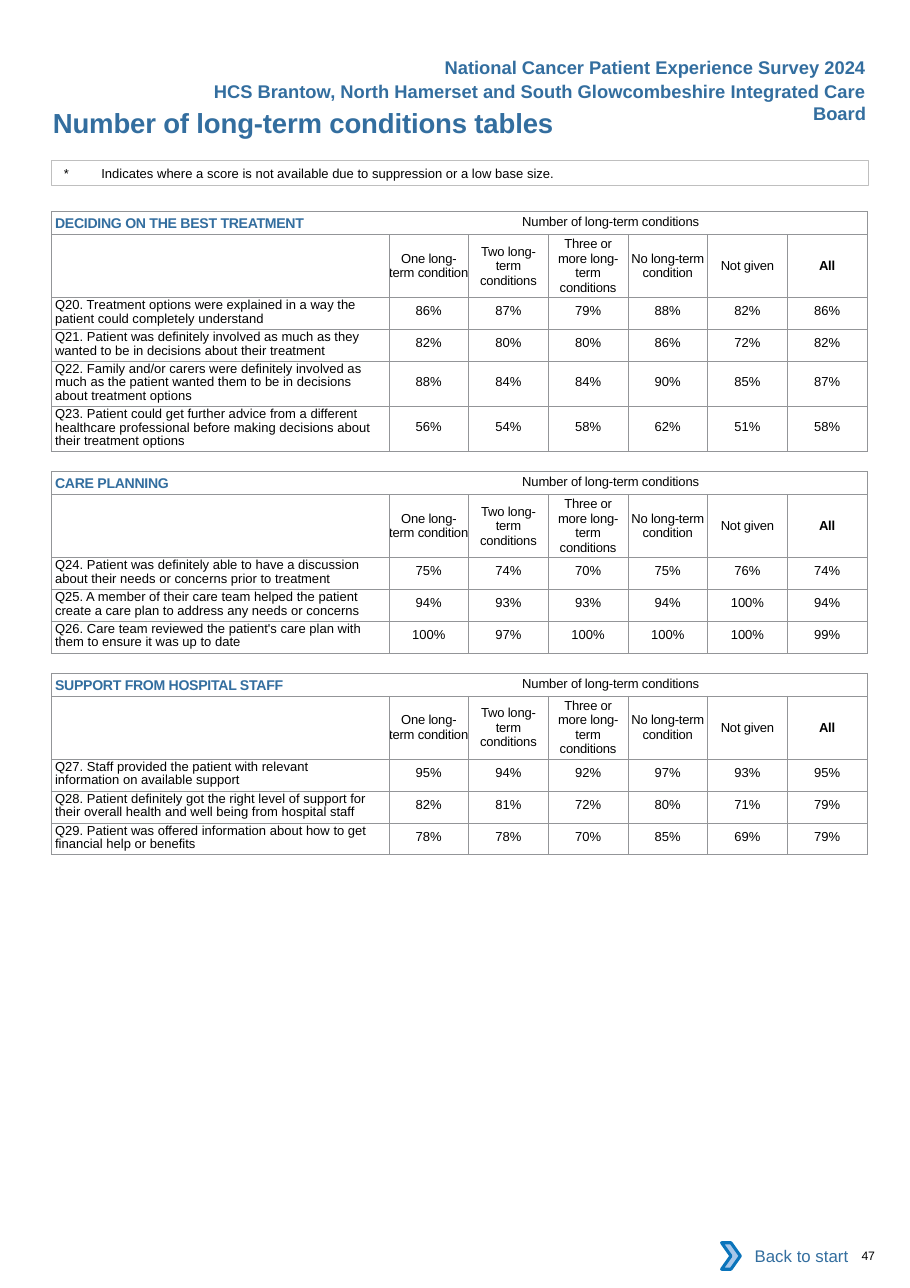
from lxml import etree
from pptx import Presentation
from pptx.dml.color import RGBColor
from pptx.enum.shapes import MSO_SHAPE
from pptx.enum.text import MSO_ANCHOR, PP_ALIGN
from pptx.oxml.ns import qn
from pptx.util import Inches, Pt

LEFT, CENTER, RIGHT = PP_ALIGN.LEFT, PP_ALIGN.CENTER, PP_ALIGN.RIGHT
TOP, MIDDLE = MSO_ANCHOR.TOP, MSO_ANCHOR.MIDDLE
RECTANGLE, CHEVRON = MSO_SHAPE.RECTANGLE, MSO_SHAPE.CHEVRON

BLUE, BLACK, GRID = "336E9F", "000000", "939598"
NO_INSETS = (0, 0, 0, 0)
BOX_INSETS = (0.1, 0.05, 0.1, 0.05)
MARGIN_LEFT = 0.47
TABLE_WIDTH, QUESTION_WIDTH = 7.4, 3.06
TITLE_HEIGHT, HEADER_HEIGHT = 0.21, 0.57
TABLES_TOP, TABLE_GAP = 1.92, 0.18
ROW_HEIGHTS = {2: 0.29, 3: 0.41}    # by lines in the question
SCORE_INSETS = {2: 0.06, 3: 0.12}

CONDITIONS = ["One long-term condition", "Two long-term conditions",
              "Three or more long-term conditions",
              "No long-term condition", "Not given", "All"]

# Heading, then (question lines, question, scores in percent)
SECTIONS = [
    ("DECIDING ON THE BEST TREATMENT", [
        (2, "Q20. Treatment options were explained in a way the patient could "
            "completely understand", (86, 87, 79, 88, 82, 86)),
        (2, "Q21. Patient was definitely involved as much as they wanted to be "
            "in decisions about their treatment", (82, 80, 80, 86, 72, 82)),
        (3, "Q22. Family and/or carers were definitely involved as much as the "
            "patient wanted them to be in decisions about treatment options",
         (88, 84, 84, 90, 85, 87)),
        (3, "Q23. Patient could get further advice from a different healthcare "
            "professional before making decisions about their treatment options",
         (56, 54, 58, 62, 51, 58)),
    ]),
    ("CARE PLANNING", [
        (2, "Q24. Patient was definitely able to have a discussion about their "
            "needs or concerns prior to treatment", (75, 74, 70, 75, 76, 74)),
        (2, "Q25. A member of their care team helped the patient create a care "
            "plan to address any needs or concerns", (94, 93, 93, 94, 100, 94)),
        (2, "Q26. Care team reviewed the patient's care plan with them to ensure "
            "it was up to date", (100, 97, 100, 100, 100, 99)),
    ]),
    ("SUPPORT FROM HOSPITAL STAFF", [
        (2, "Q27. Staff provided the patient with relevant information on "
            "available support", (95, 94, 92, 97, 93, 95)),
        (2, "Q28. Patient definitely got the right level of support for their "
            "overall health and well being from hospital staff",
         (82, 81, 72, 80, 71, 79)),
        (2, "Q29. Patient was offered information about how to get financial "
            "help or benefits", (78, 78, 70, 85, 69, 79)),
    ]),
]


def color(value):
    return RGBColor.from_string(value)


def set_insets(target, insets):
    for side, inset in zip(("left", "top", "right", "bottom"), insets):
        setattr(target, f"margin_{side}", Inches(inset))


def add_run(paragraph, text, size=8.5, hue=BLACK, bold=False, spacing=0, baseline=0):
    run = paragraph.add_run()
    run.text = text
    formats = {"name": "Arial", "size": Pt(size), "bold": bold}
    for name, value in formats.items():
        setattr(run.font, name, value)
    run.font.color.rgb = color(hue)
    properties = run.font._element
    for name, value in {"spc": spacing, "baseline": baseline}.items():
        if value:
            properties.set(name, str(value))


def set_indent(paragraph, indent, tab=None):
    properties = paragraph._p.get_or_add_pPr()
    properties.set("marL", str(Inches(indent)))
    if tab:
        tabs = etree.SubElement(properties, qn("a:tabLst"))
        etree.SubElement(tabs, qn("a:tab"), pos=str(Inches(tab)), algn="l")


def add_text(slide, box, text, align=LEFT, insets=NO_INSETS, wrap=True, indent=0,
             **font):
    shape = slide.shapes.add_textbox(*map(Inches, box))
    frame = shape.text_frame
    frame.word_wrap = wrap
    set_insets(frame, insets)
    paragraph = frame.paragraphs[0]
    paragraph.alignment = align
    set_indent(paragraph, indent)
    add_run(paragraph, text, **font)


def add_plain_shape(shapes, kind, box, fill=None, line=None, line_width=0.5):
    shape = shapes.add_shape(kind, *map(Inches, box))
    shape.shadow.inherit = False
    if fill:
        shape.fill.solid()
        shape.fill.fore_color.rgb = color(fill)
    else:
        shape.fill.background()
    if line:
        shape.line.color.rgb = color(line)
        shape.line.width = Pt(line_width)
    else:
        shape.line.fill.background()
    return shape


def format_cell(cell):
    set_insets(cell, NO_INSETS)
    cell.fill.background()
    properties = cell._tc.get_or_add_tcPr()
    for index, side in enumerate(("a:lnL", "a:lnR", "a:lnT", "a:lnB")):
        border = etree.Element(qn(side), w=str(Pt(0.5)))
        fill = etree.SubElement(border, qn("a:solidFill"))
        etree.SubElement(fill, qn("a:srgbClr"), val=GRID)
        properties.insert(index, border)


def fill_cell(cell, text, align=CENTER, anchor=MIDDLE, top=0, right=0, **font):
    cell.vertical_anchor = anchor
    set_insets(cell, (0, top, right, 0))
    paragraph = cell.text_frame.paragraphs[0]
    paragraph.alignment = align
    add_run(paragraph, text, **font)
    return paragraph


def add_score_table(slide, left, top, heading, questions):
    """Draw one section's table and return its height."""
    heights = [TITLE_HEIGHT, HEADER_HEIGHT] + [ROW_HEIGHTS[q[0]] for q in questions]
    score_width = (TABLE_WIDTH - QUESTION_WIDTH) / len(CONDITIONS)
    widths = [QUESTION_WIDTH] + [score_width] * len(CONDITIONS)
    box = (left, top, TABLE_WIDTH, sum(heights))
    table = slide.shapes.add_table(len(heights), len(widths), *map(Inches, box)).table
    table.first_row = table.horz_banding = False
    for row, height in zip(table.rows, heights):
        row.height = Inches(height)
    for column, width in zip(table.columns, widths):
        column.width = Inches(width)
    for cell in table.iter_cells():
        format_cell(cell)

    # Heading row
    title_cell = table.cell(0, 0)
    title_cell.merge(table.cell(0, len(CONDITIONS)))
    paragraph = fill_cell(title_cell, heading + "\t", LEFT, size=15.8, hue=BLUE,
                          bold=True, spacing=-15, baseline=-8000)
    add_run(paragraph, "Number of long-term conditions", spacing=-10)
    paragraph.line_spacing = Pt(11.8)
    set_indent(paragraph, 0.03, tab=4.24)

    # Column labels
    for column, label in enumerate(CONDITIONS, 1):
        fill_cell(table.cell(1, column), label, bold=label == "All", spacing=-15)

    # Questions and scores
    for row, (lines, question, scores) in enumerate(questions, 2):
        paragraph = fill_cell(table.cell(row, 0), question, LEFT, TOP, top=0.02,
                              right=0.14)
        paragraph.line_spacing = Pt(8.6)
        set_indent(paragraph, 0.03)
        for column, score in enumerate(scores, 1):
            fill_cell(table.cell(row, column), f"{score}%", anchor=TOP,
                      top=SCORE_INSETS[lines])
    return sum(heights)


def add_page_header(slide, left, top):
    heading = {"align": RIGHT, "insets": BOX_INSETS, "size": 12, "hue": BLUE,
               "bold": True}
    add_text(slide, (left + 3.45, top, 4.04, 0.3),
             "National Cancer Patient Experience Survey 2024", wrap=False, **heading)
    add_text(slide, (left + 1.16, top + 0.22, 6.33, 0.5),
             "HCS Brantow, North Hamerset and South Glowcombeshire Integrated "
             "Care Board", **heading)
    add_text(slide, (left, top + 0.5, 4.66, 0.3), "Number of long-term conditions tables",
             wrap=False, indent=0.01, size=18, hue=BLUE, bold=True, spacing=-10)


def add_note(slide, box):
    frame = add_plain_shape(slide.shapes, RECTANGLE, box, line="BFBFBF").text_frame
    frame.word_wrap = True
    frame.vertical_anchor = TOP
    set_insets(frame, (0, 0.04, 0, 0.04))
    paragraph = frame.paragraphs[0]
    paragraph.alignment = LEFT
    set_indent(paragraph, 0.11, tab=0.34)
    add_run(paragraph, "*\tIndicates where a score is not available due to "
                       "suppression or a low base size.")


def add_footer(slide, left, top):
    button = slide.shapes.add_group_shape()
    label = add_plain_shape(button.shapes, RECTANGLE, (left + 0.07, top, 1.18, 0.42),
                            fill="FFFFFF")
    label.text_frame.vertical_anchor = MIDDLE
    paragraph = label.text_frame.paragraphs[0]
    paragraph.alignment = RIGHT
    add_run(paragraph, "Back to start", size=11, hue=BLUE)
    add_plain_shape(button.shapes, CHEVRON, (left, top + 0.09, 0.17, 0.24),
                    fill="A8C7E9", line="0A74BB", line_width=2)
    add_text(slide, (left + 1.17, top + 0.14, 0.51, 0.13), "47", indent=0.1, size=8,
             spacing=-20)


def main():
    presentation = Presentation()
    presentation.slide_width, presentation.slide_height = Inches(8.26), Inches(11.69)
    slide = presentation.slides.add_slide(presentation.slide_layouts[6])
    add_page_header(slide, MARGIN_LEFT, 0.46)
    add_note(slide, (MARGIN_LEFT, 1.46, 7.41, 0.22))
    top = TABLES_TOP
    for heading, questions in SECTIONS:
        top += add_score_table(slide, MARGIN_LEFT, top, heading, questions) + TABLE_GAP
    add_footer(slide, 6.55, 11.19)
    presentation.save("out.pptx")


if __name__ == "__main__":
    main()
